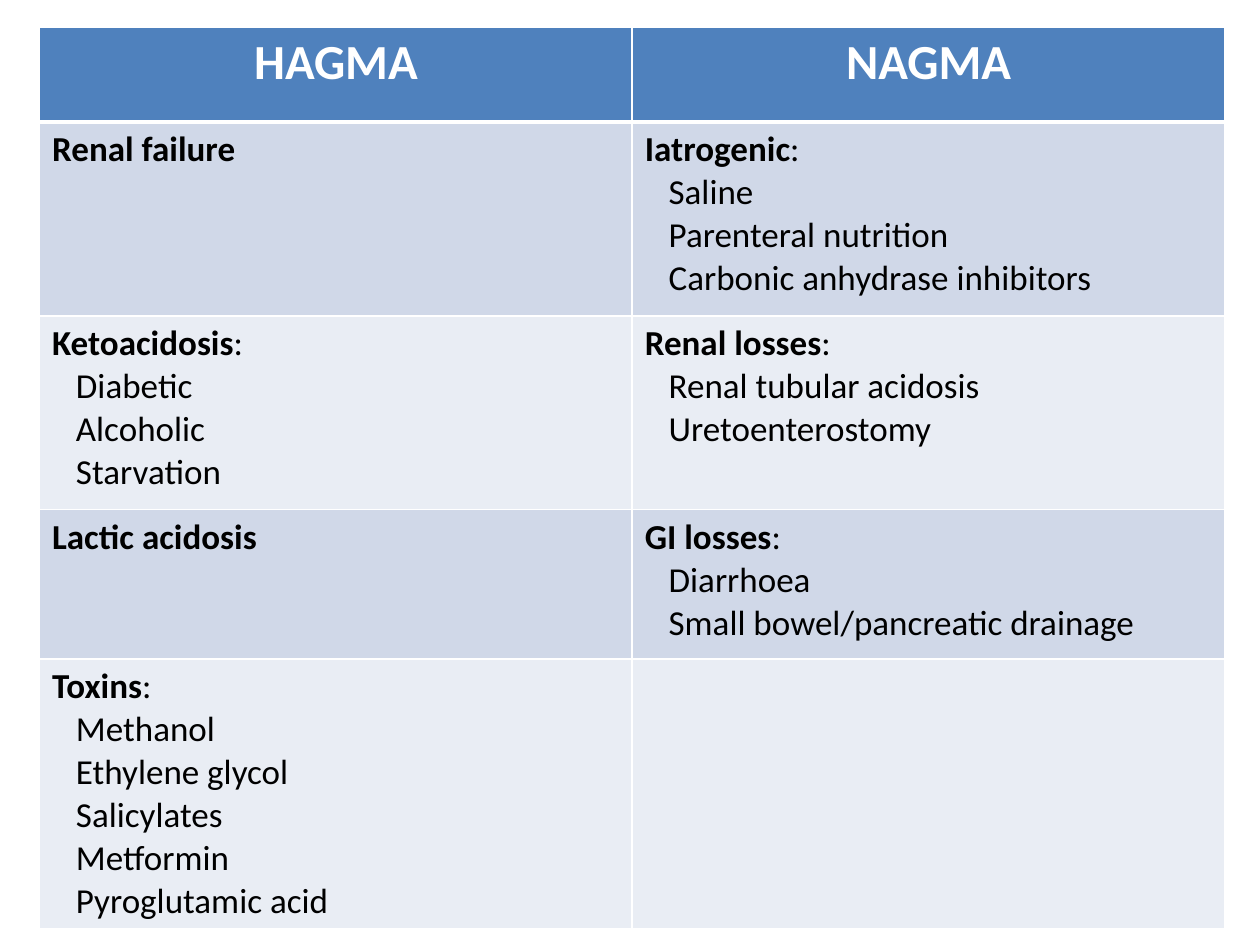
from lxml.etree import SubElement
from pptx import Presentation
from pptx.dml.color import RGBColor
from pptx.enum.text import PP_ALIGN
from pptx.oxml.ns import qn
from pptx.util import Pt


def style(run, size, color, bold):
    run.font.name = "Calibri"
    run.font.size = Pt(size)
    run.font.bold = bold
    run.font.color.rgb = RGBColor.from_string(color)


def paint(cell, color, edges):
    """Fill a cell and give it white borders; edges maps a side to its width."""
    props = cell._tc.get_or_add_tcPr()
    for side, width in edges.items():
        line = SubElement(props, qn(f"a:ln{side}"), w=str(Pt(width)))
        solid = SubElement(line, qn("a:solidFill"))
        SubElement(solid, qn("a:srgbClr"), val="FFFFFF")
    cell.fill.solid()
    cell.fill.fore_color.rgb = RGBColor.from_string(color)


heads = ["HAGMA", "NAGMA"]
causes = [
    [["Renal failure"],
     ["Iatrogenic", "Saline", "Parenteral nutrition",
      "Carbonic anhydrase inhibitors"]],
    [["Ketoacidosis", "Diabetic", "Alcoholic", "Starvation"],
     ["Renal losses", "Renal tubular acidosis", "Uretoenterostomy"]],
    [["Lactic acidosis"],
     ["GI losses", "Diarrhoea", "Small bowel/pancreatic drainage"]],
    [["Toxins", "Methanol", "Ethylene glycol", "Salicylates", "Metformin",
      "Pyroglutamic acid"],
     []],
]
heights = [54.4, 110.8, 110.8, 85.4, 153.6]
bands = ["D0D8E8", "E9EDF4"]

deck = Presentation()
deck.slide_width, deck.slide_height = Pt(720), Pt(540)
slide = deck.slides.add_slide(deck.slide_layouts[6])

table = slide.shapes.add_table(
    len(heights), len(heads), Pt(22.6), Pt(15.3), Pt(677.4), Pt(sum(heights))
).table
for row, height in zip(table.rows, heights):
    row.height = Pt(height)
for col in table.columns:
    col.width = Pt(338.7)

for c, head in enumerate(heads):
    cell = table.cell(0, c)
    paint(cell, "4F81BD", {"L": 1, "R": 1, "T": 1, "B": 3})
    para = cell.text_frame.paragraphs[0]
    para.text = head
    para.alignment = PP_ALIGN.CENTER
    style(para.runs[0], 28, "FFFFFF", True)

for r, pair in enumerate(causes, 1):
    for c, lines in enumerate(pair):
        cell = table.cell(r, c)
        top = 3 if r == 1 else 1
        paint(cell, bands[(r - 1) % 2], {"L": 1, "R": 1, "T": top, "B": 1})
        frame = cell.text_frame
        frame.text = "\n".join(lines)
        for n, para in enumerate(frame.paragraphs[:len(lines)]):
            style(para.runs[0], 20, "000000", n == 0)
            if n:
                para._p.get_or_add_pPr().set("marL", str(Pt(13.6)))
            elif len(lines) > 1:
                colon = para.add_run()
                colon.text = ":"
                style(colon, 20, "000000", False)

deck.save("out.pptx")
